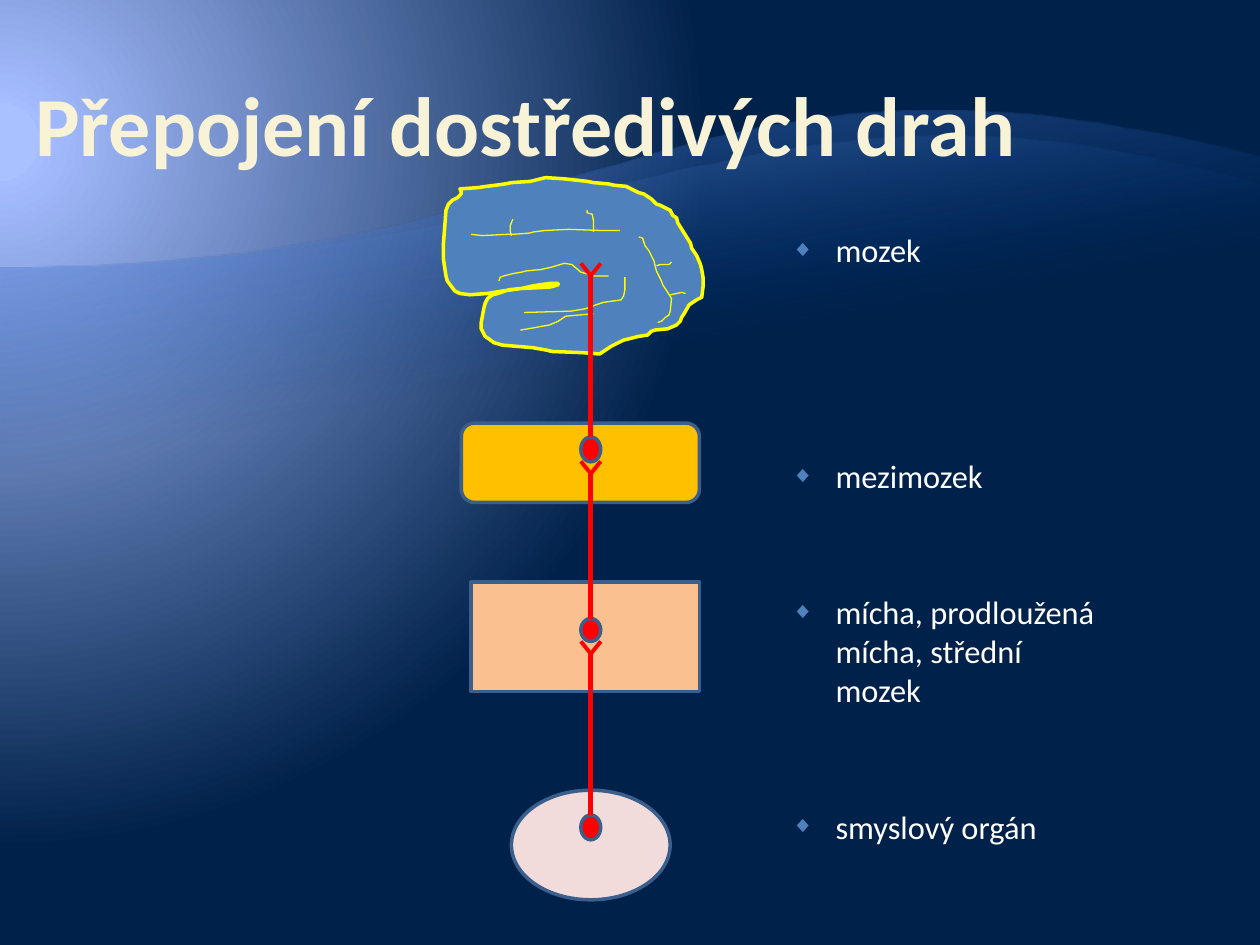
from lxml.etree import SubElement
from pptx import Presentation
from pptx.dml.color import RGBColor
from pptx.enum.shapes import MSO_CONNECTOR as Link, MSO_SHAPE as Preset
from pptx.enum.text import MSO_ANCHOR as Anchor, MSO_AUTO_SIZE as AutoSize, PP_ALIGN as Align
from pptx.oxml import parse_xml
from pptx.oxml.ns import nsdecls, qn
from pptx.util import Cm, Pt

COLORS = {
    "night": "00214A", "glow": "AAC1FF", "halo": "A5BDFF", "wave": "7C9FFF", "deep": "00469C",
    "title": "F8F3D7", "text": "FFFFFF", "blue": "4F81BD", "edge": "3A5F8C", "yellow": "FFFF00",
    "red": "FF0000", "amber": "FFC000", "peach": "FAC090", "rose": "F2DCDB",
}
FONT = "Calibri"
HUNDREDTH_INCH = Cm(2.54) / 100
CIRCLE = '<a:path path="circle"><a:fillToRect l="20000" t="30000" r="135000" b="100000"/></a:path>'
UPWARD = '<a:lin ang="15600000" scaled="0"/>'

BRAIN = [
    (365, 150), (379, 149), (386, 148), (394, 147), (401, 146), (406, 145), (421, 144), (433, 141),
    (448, 142), (466, 144), (471, 145), (483, 146), (487, 147), (497, 148), (507, 153), (511, 154),
    (517, 158), (521, 162), (524, 163), (532, 167), (534, 171), (537, 173), (538, 177), (543, 185),
    (548, 193), (549, 197), (553, 203), (556, 210), (557, 214), (558, 220), (558, 228), (557, 236),
    (553, 238), (547, 242), (543, 249), (541, 252), (540, 255), (537, 258), (530, 261), (520, 262),
    (517, 263), (514, 266), (507, 267), (499, 269), (495, 270), (485, 275), (479, 279), (476, 281),
    (463, 280), (438, 279), (434, 278), (423, 276), (399, 274), (392, 272), (388, 269), (385, 267),
    (382, 261), (382, 256), (384, 245), (385, 241), (387, 237), (391, 234), (395, 233), (398, 232),
    (404, 230), (414, 229), (436, 228), (440, 227), (443, 226), (443, 225), (437, 225), (429, 226),
    (423, 227), (414, 229), (399, 231), (387, 233), (373, 234), (365, 233), (361, 231), (358, 227),
    (355, 223), (354, 219), (352, 206), (352, 193), (353, 180), (354, 167), (356, 162), (359, 159),
    (363, 157), (366, 154), (366, 152),
]
GROOVES = [
    [(374, 186), (383, 187), (402, 186), (407, 186), (420, 185), (424, 184), (432, 183),
     (451, 182), (479, 183), (492, 183)],
    [(396, 223), (397, 220), (400, 219), (408, 217), (414, 216), (418, 215), (429, 214),
     (438, 212), (448, 209), (454, 210), (461, 216), (468, 218), (472, 219), (483, 219)],
    [(413, 262), (425, 260), (430, 259), (436, 258), (443, 255), (449, 251), (471, 249)],
    [(507, 188), (510, 189), (512, 195), (515, 199), (519, 207), (521, 215), (525, 223),
     (526, 226), (530, 232), (533, 237), (532, 247), (531, 250), (528, 252), (525, 255), (522, 256)],
    [(406, 187), (405, 184), (405, 179), (407, 174)],
    [(471, 184), (471, 175), (470, 170), (466, 169), (466, 167)],
    [(521, 211), (524, 210), (531, 210), (533, 208)],
    [(532, 234), (541, 232), (544, 233)],
    [(416, 248), (453, 247), (465, 245), (473, 242), (479, 240), (493, 238), (495, 235),
     (496, 230), (496, 220)],
]


def rgb(name):
    return RGBColor.from_string(COLORS[name])


def curve(start, control1, control2, end, steps=60):
    points = []
    for step in range(steps + 1):
        t = step / steps
        weights = ((1 - t) ** 3, 3 * t * (1 - t) ** 2, 3 * t * t * (1 - t), t ** 3)
        points.append(tuple(
            sum(weight * value for weight, value in zip(weights, axis))
            for axis in zip(start, control1, control2, end)))
    return points


class SlideBuilder:
    def __init__(self, slide):
        self.slide = slide

    def gradient(self, element, stops, direction):
        marks = "".join(
            f'<a:gs pos="{position * 1000}"><a:srgbClr val="{COLORS[color]}">'
            f'<a:alpha val="{alpha * 1000}"/></a:srgbClr></a:gs>'
            for position, color, alpha in stops)
        solid = element.xpath(".//a:solidFill")[0]
        solid.getparent().replace(solid, parse_xml(
            f'<a:gradFill rotWithShape="1" {nsdecls("a")}><a:gsLst>{marks}</a:gsLst>'
            f'{direction}</a:gradFill>'))

    def background(self):
        self.slide.background.fill.solid()
        stops = [(5, "glow", 100), (5, "halo", 100), (90, "night", 100)]
        self.gradient(self.slide.element.xpath(".//p:bgPr")[0], stops, CIRCLE)

    def style(self, shape, fill, line=None, width=2):
        shape.shadow.inherit = False
        if fill:
            shape.fill.solid()
            shape.fill.fore_color.rgb = rgb(fill)
        else:
            shape.fill.background()
        if line:
            shape.line.color.rgb = rgb(line)
            shape.line.width = Pt(width)
        else:
            shape.line.fill.background()

    def outline(self, shapes, points, fill, line=None, width=2, close=True):
        builder = shapes.build_freeform(*points[0], scale=HUNDREDTH_INCH)
        builder.add_line_segments(points[1:], close=close)
        shape = builder.convert_to_shape()
        self.style(shape, fill, line, width)
        return shape

    def wave(self, controls, bottom, color, alpha):
        points = curve(*controls) + [(1000, bottom), (0, bottom)]
        shape = self.outline(self.slide.shapes, points, color)
        self.gradient(shape.element.spPr, [(65, "deep", 0), (100, color, alpha)], UPWARD)
        shape.element.getparent().insert(2, shape.element)

    def place(self, holder, left, top, width, height):
        holder.left, holder.top, holder.width, holder.height = map(Cm, (left, top, width, height))
        frame = holder.text_frame
        frame.word_wrap = True
        frame.auto_size = AutoSize.NONE
        return frame

    def font(self, para, size, color, bold):
        para.alignment = Align.LEFT
        para.font.name = FONT
        para.font.size = Pt(size)
        para.font.bold = bold
        para.font.color.rgb = rgb(color)

    def title(self, text, *area):
        frame = self.place(self.slide.shapes.title, *area)
        frame.vertical_anchor = Anchor.BOTTOM
        frame.margin_left = frame.margin_right = 0
        frame.margin_top = frame.margin_bottom = Cm(0.03)
        frame.text = text
        self.font(frame.paragraphs[0], 48, "title", True)

    def bullets(self, items, *area):
        frame = self.place(self.slide.placeholders[1], *area)
        frame.text = "\n".join(text for text, gap in items)
        for para, (text, gap) in zip(frame.paragraphs, items):
            props = para._p.get_or_add_pPr()
            props.set("marL", str(Cm(0.89)))
            props.set("indent", str(-Cm(0.89)))
            tint = SubElement(props, qn("a:buClr"))
            SubElement(tint, qn("a:srgbClr"), val=COLORS["blue"])
            SubElement(props, qn("a:buSzPct"), val="70000")
            SubElement(props, qn("a:buChar"), char="◆")
            para.space_before = Pt(gap)
            self.font(para, 18.5, "text", False)

    def brain(self):
        shapes = self.slide.shapes.add_group_shape().shapes
        self.outline(shapes, BRAIN, "blue", "yellow")
        for groove in GROOVES:
            self.outline(shapes, groove, None, "yellow", 0.75, close=False)

    def shape(self, shapes, preset, area, fill):
        shape = shapes.add_shape(preset, *map(Cm, area))
        self.style(shape, fill, "edge")

    def line(self, shapes, start, end, width):
        link = shapes.add_connector(Link.STRAIGHT, *map(Cm, start + end))
        link.line.color.rgb = rgb("red")
        link.line.width = Pt(width)
        SubElement(link.element.spPr, qn("a:effectLst"))

    def neuron(self, top, height, tip, center=11.91):
        shapes = self.slide.shapes.add_group_shape().shapes
        self.shape(shapes, Preset.OVAL, (center - 0.2, top, 0.4, height), "red")
        self.line(shapes, (center, top), (center, tip), 3)
        for side in (-0.2, 0.2):
            self.line(shapes, (center + side, tip - 0.25), (center, tip), 2.25)


def main():
    deck = Presentation()
    deck.slide_width, deck.slide_height = Cm(25.4), Cm(19.05)
    page = SlideBuilder(deck.slides.add_slide(deck.slide_layouts[1]))
    page.background()
    page.wave([(0, 213), (500, 213), (598, 31), (1000, 147)], 637, "halo", 30)
    page.wave([(0, 213), (500, 213), (534, 5), (1000, 125)], 733, "wave", 55)
    page.title("Přepojení dostředivých drah", 0.71, 0.53, 22.86, 3)
    page.bullets([
        ("mozek", 0), ("mezimozek", 106.5),
        ("mícha, prodloužená mícha, střední mozek", 55.8), ("smyslový orgán", 55.8),
    ], 15.7, 4.52, 6.63, 13.79)
    page.brain()
    for preset, area, fill in [
        (Preset.ROUNDED_RECTANGLE, (9.3, 8.53, 4.8, 1.6), "amber"),
        (Preset.RECTANGLE, (9.5, 11.73, 4.6, 2.21), "peach"),
        (Preset.OVAL, (10.31, 15.93, 3.2, 2.21), "rose"),
    ]:
        page.shape(page.slide.shapes, preset, area, fill)
    for top, height, tip in [(16.43, 0.5, 13.18), (12.47, 0.46, 9.55), (8.81, 0.5, 5.56)]:
        page.neuron(top, height, tip)
    deck.save("out.pptx")


if __name__ == "__main__":
    main()
